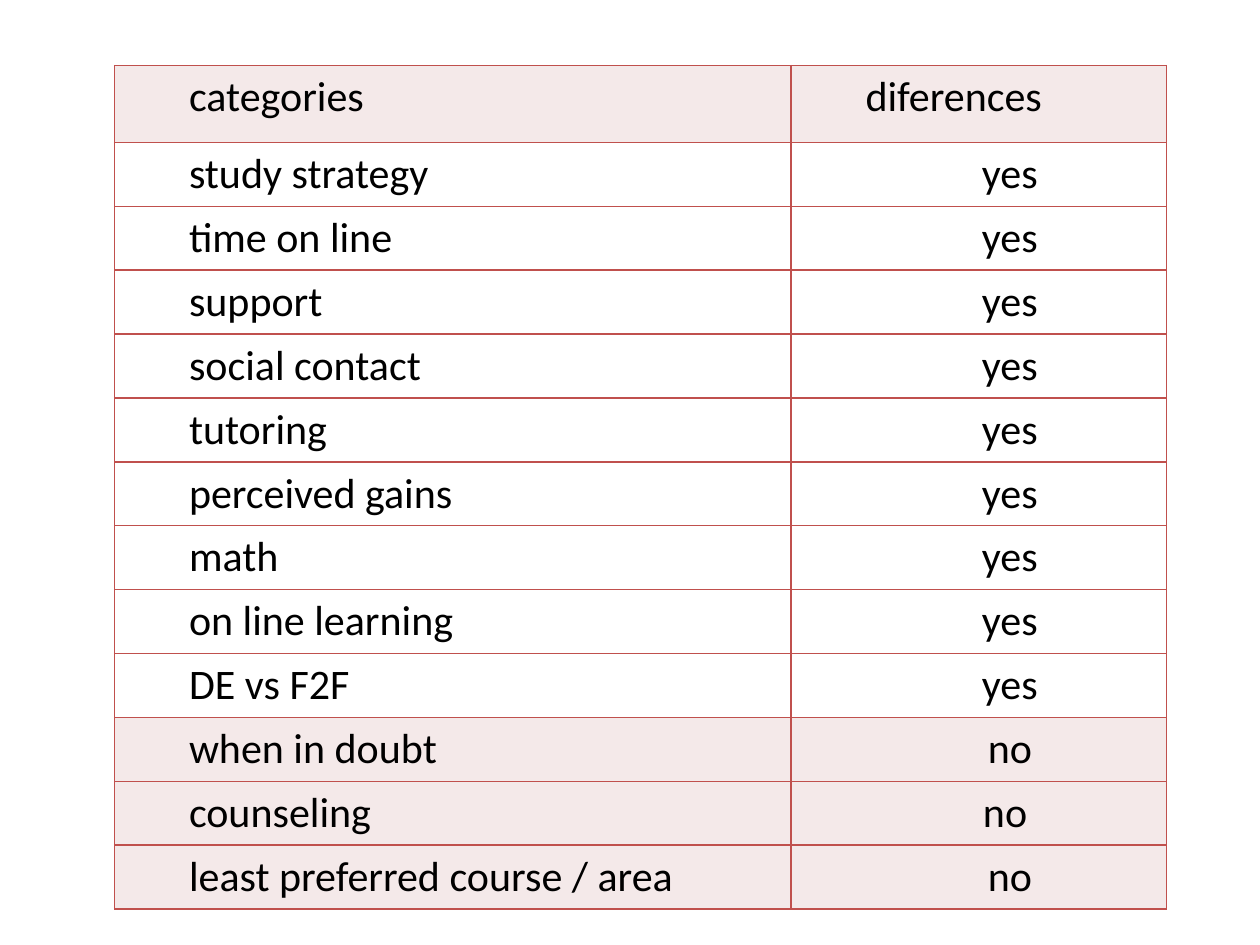
from lxml.etree import SubElement
from pptx import Presentation
from pptx.dml.color import RGBColor
from pptx.enum.text import PP_ALIGN
from pptx.oxml.ns import qn
from pptx.util import Inches, Pt

BLACK = RGBColor(0x00, 0x00, 0x00)
RED = RGBColor(0xC0, 0x50, 0x4D)
PINK = RGBColor(0xF4, 0xE9, 0xE9)

HEADER = ("categories ", "diferences")
ROWS = [
    ("study strategy", "yes"),
    ("time on line", "yes"),
    ("support", "yes"),
    ("social contact", "yes"),
    ("tutoring", "yes"),
    ("perceived gains", "yes"),
    ("math ", "yes"),
    ("on line learning", "yes"),
    ("DE vs F2F", "yes"),
    ("when in doubt", "no"),
    ("counseling", "no "),
    ("least preferred course / area", "no"),
]
COLUMN_WIDTHS = (5.37, 2.98)
HEADER_HEIGHT, ROW_HEIGHT = 0.61, 0.49


def add_borders(cell):
    tc_pr = cell._tc.get_or_add_tcPr()
    for side in ("a:lnL", "a:lnR", "a:lnT", "a:lnB"):
        line = SubElement(tc_pr, qn(side), w=str(Pt(1)))
        fill = SubElement(line, qn("a:solidFill"))
        SubElement(fill, qn("a:srgbClr"), val=str(RED))


def format_cell(cell, text, align, shaded):
    add_borders(cell)
    if shaded:
        cell.fill.solid()
        cell.fill.fore_color.rgb = PINK
    else:
        cell.fill.background()

    p = cell.text_frame.paragraphs[0]
    p.text = text
    p.alignment = align
    p._p.get_or_add_pPr().set("marL", str(Inches(0.49)))
    font = p.runs[0].font
    font.name, font.size, font.bold = "Calibri", Pt(24), False
    font.color.rgb = BLACK


def add_differences_table(s):
    rows = [HEADER] + ROWS
    height = HEADER_HEIGHT + ROW_HEIGHT * len(ROWS)
    table = s.shapes.add_table(
        len(rows), len(COLUMN_WIDTHS), Inches(0.91), Inches(0.52),
        Inches(sum(COLUMN_WIDTHS)), Inches(height)).table
    table.first_row = table.horz_banding = False

    for column, width in zip(table.columns, COLUMN_WIDTHS):
        column.width = Inches(width)
    for i, row in enumerate(rows):
        is_header = i == 0
        table.rows[i].height = Inches(HEADER_HEIGHT if is_header else ROW_HEIGHT)
        # The header and the categories without differences are shaded
        shaded = is_header or row[1].strip() == "no"
        for j, text in enumerate(row):
            centred = j == 1 and not is_header
            align = PP_ALIGN.CENTER if centred else PP_ALIGN.JUSTIFY
            format_cell(table.cell(i, j), text, align, shaded)


def main():
    prs = Presentation()
    prs.slide_width, prs.slide_height = Inches(10), Inches(7.5)
    s = prs.slides.add_slide(prs.slide_layouts[6])
    add_differences_table(s)
    prs.save("out.pptx")


if __name__ == "__main__":
    main()
